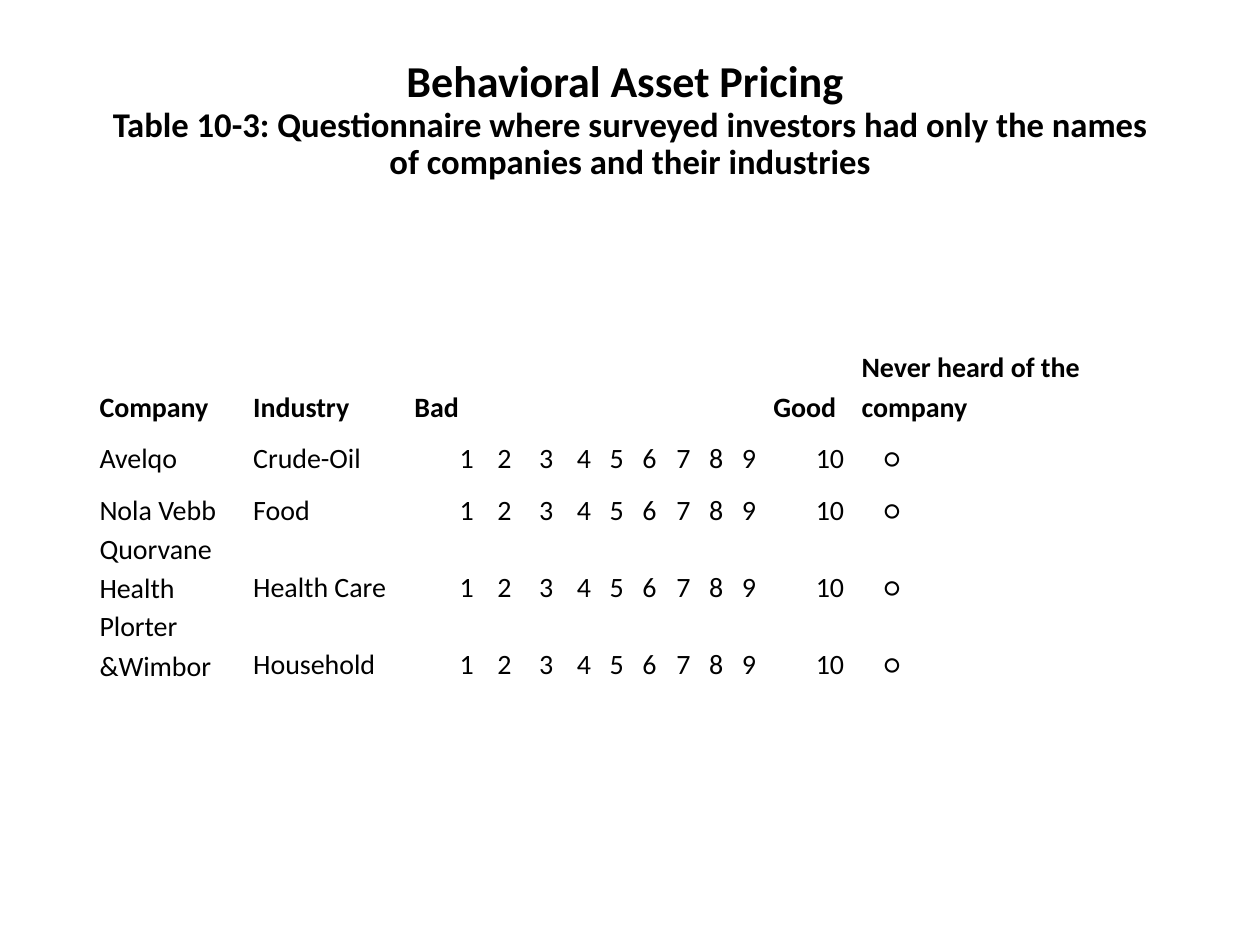
from pptx import Presentation
from pptx.dml.color import RGBColor
from pptx.enum.text import MSO_ANCHOR, PP_ALIGN
from pptx.util import Inches, Pt

COLORS = {"text": "000000", "background": "FFFFFF"}


class SlideBuilder:
    """Holds the style and the current slide."""

    font = "Calibri"

    def __init__(self, slide):
        self.slide = slide
        fill = slide.background.fill
        fill.solid()
        fill.fore_color.rgb = RGBColor.from_string(COLORS["background"])

    def style(self, run, size, bold=False):
        run.font.name = self.font
        run.font.size = Pt(size)
        run.font.bold = bold
        run.font.color.rgb = RGBColor.from_string(COLORS["text"])

    def title(self, heading, caption, left, top, width, height):
        box = self.slide.shapes.add_textbox(
            Inches(left), Inches(top), Inches(width), Inches(height))
        tf = box.text_frame
        tf.word_wrap = True
        tf.vertical_anchor = MSO_ANCHOR.MIDDLE
        tf.margin_bottom = Inches(0.38)
        p = tf.paragraphs[0]
        p.text = f"{heading}\v{caption}"
        p.alignment = PP_ALIGN.CENTER
        p.line_spacing = 0.9
        for r, size in zip(p.runs, (25.2, 19.8)):
            self.style(r, size, bold=True)

    def cell(self, cell, text, bold):
        cell.fill.background()
        cell.vertical_anchor = MSO_ANCHOR.BOTTOM
        cell.margin_left = cell.margin_right = Inches(0.07)
        cell.margin_top = cell.margin_bottom = 0
        if not text:
            return
        p = cell.text_frame.paragraphs[0]
        p.text = text
        p.line_spacing = 1.15
        p.alignment = PP_ALIGN.RIGHT if text.isdigit() else PP_ALIGN.LEFT
        for r in p.runs:
            self.style(r, 16, bold)

    def table(self, rows, left, top, col_widths, row_heights):
        frame = self.slide.shapes.add_table(
            len(rows), len(col_widths), Inches(left), Inches(top),
            Inches(sum(col_widths)), Inches(sum(row_heights)))
        table = frame.table
        table.first_row = table.horz_banding = False
        for column, width in zip(table.columns, col_widths):
            column.width = Inches(width)
        for row, height in zip(table.rows, row_heights):
            row.height = Inches(height)
        for i, values in enumerate(rows):
            for j, text in enumerate(values):
                self.cell(table.cell(i, j), text, bold=i == 0)
        return table


def main():
    prs = Presentation()
    prs.slide_width, prs.slide_height = Inches(10), Inches(7.5)
    s = SlideBuilder(prs.slides.add_slide(prs.slide_layouts[6]))

    # Title with table caption
    s.title("Behavioral Asset Pricing ",
            "Table 10-3: Questionnaire where surveyed investors had only "
            "the names of companies and their industries",
            0.69, 0.4, 8.62, 1.45)

    # Questionnaire: company, industry, scale from 1 to 10, answer circle
    companies = [("Avelqo", "Crude-Oil"), ("Nola Vebb", "Food"),
                 ("Quorvane Health", "Health Care"),
                 ("Plorter &Wimbor", "Household")]
    scale = [str(n) for n in range(1, 11)]
    header = ["Company", "Industry", "Bad", *[""] * 8, "Good",
              "Never heard of the company", "", ""]
    rows = [header] + [[*company, *scale, "", "○", ""] for company in companies]
    col_widths = [1.22, 1.28, 0.61, 0.3, 0.33, 0.3, 0.26, 0.26, 0.27,
                  0.26, 0.26, 0.7, 0.18, 1.63, 0.27]
    table = s.table(rows, 0.72, 2.65, col_widths,
                    [0.72] + [0.41] * len(companies))
    table.cell(0, 12).merge(table.cell(0, 14))

    prs.save("out.pptx")


if __name__ == "__main__":
    main()
